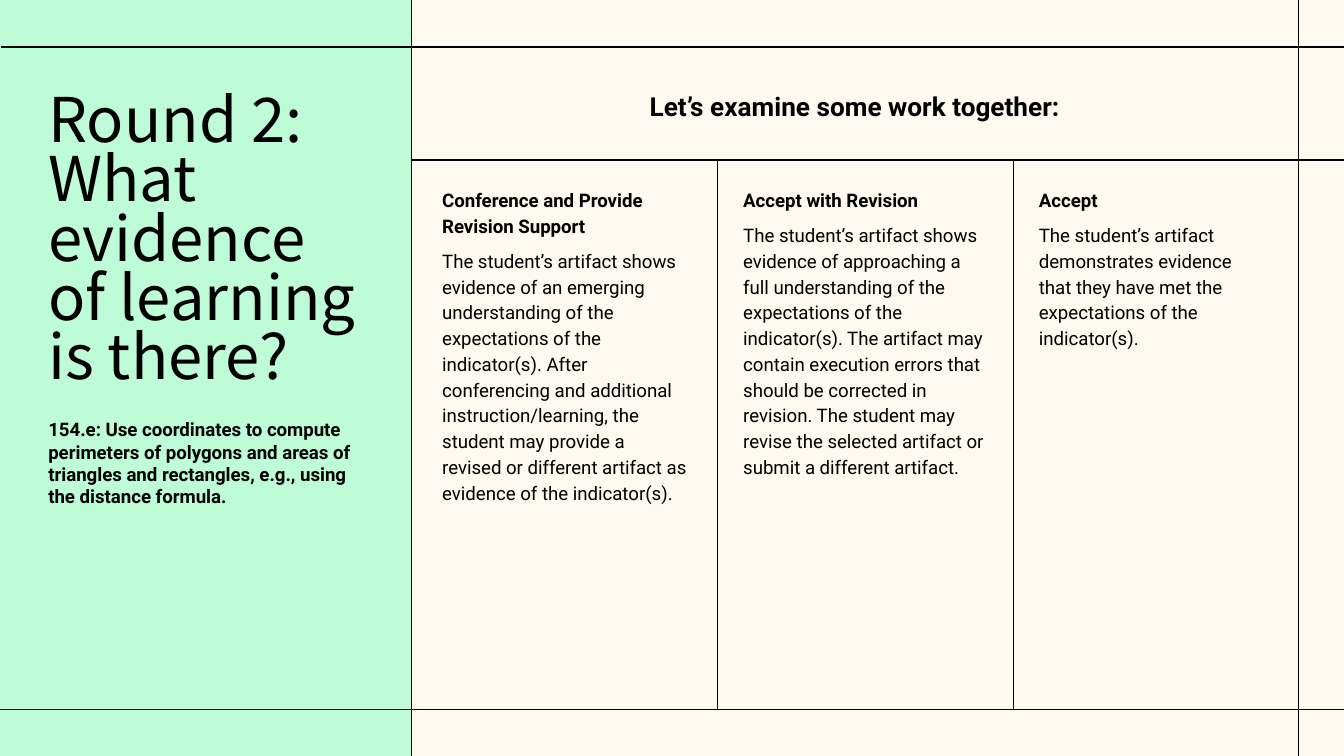
import pptx
import pptx.dml.color
import pptx.enum.shapes
import pptx.enum.text
import pptx.oxml.ns
import pptx.util
from dataclasses import dataclass
from lxml import etree

Inches = pptx.util.Inches
Pt = pptx.util.Pt
RGB = pptx.dml.color.RGBColor.from_string
ALIGN = pptx.enum.text.PP_ALIGN


@dataclass(frozen=True)
class Theme:
    background: str = "FFF8EF"
    panel: str = "BDFCD7"
    ink: str = "000000"
    title_font: str = "Noto Sans CJK KR"
    body_font: str = "Roboto"
    title_size: float = 33
    heading_size: float = 14
    body_size: float = 10
    rule_width: float = 0.75


THEME = Theme()
WIDTH = 10
HEIGHT = WIDTH * 9 / 16
PANEL_RIGHT = 3.06
TOP_RULE, HEADER_RULE, BOTTOM_RULE = 0.35, 1.19, 5.28
RIGHT_RULE = 9.66
RULE_START, RULE_END = 0.01, 10.02
COLUMN_TOP, COLUMN_WIDTH = 1.38, 1.82

TITLE = {"name": THEME.title_font, "size": Pt(THEME.title_size), "bold": False}
HEADING = {"name": THEME.body_font, "size": Pt(THEME.heading_size), "bold": True}
STRONG = {"name": THEME.body_font, "size": Pt(THEME.body_size), "bold": True}
BODY = {**STRONG, "bold": False}

COLUMN_LINES = {"line_spacing": 1.15}
COLUMN_BODY = {**COLUMN_LINES, "space_before": Pt(5), "space_after": Pt(5)}

# left edge, height, heading, description
COLUMNS = [
    (3.29, 2.56, "Conference and Provide Revision Support",
     "The student’s artifact shows evidence of an emerging understanding of the "
     "expectations of the indicator(s). After conferencing and additional "
     "instruction/learning, the student may provide a revised or different "
     "artifact as evidence of the indicator(s)."),
    (5.53, 2.37, "Accept with Revision",
     "The student’s artifact shows evidence of approaching a full understanding "
     "of the expectations of the indicator(s). The artifact may contain execution "
     "errors that should be corrected in revision. The student may revise the "
     "selected artifact or submit a different artifact."),
    (7.73, 1.21, "Accept",
     "The student’s artifact demonstrates evidence \n"
     "that they have met the expectations of the indicator(s)."),
]


def set_all(obj, values):
    for name, value in values.items():
        setattr(obj, name, value)


def add_rule(s, x1, y1, x2, y2):
    line = s.shapes.add_connector(
        pptx.enum.shapes.MSO_CONNECTOR.STRAIGHT,
        Inches(x1), Inches(y1), Inches(x2), Inches(y2))
    line.line.color.rgb = RGB(THEME.ink)
    line.line.width = Pt(THEME.rule_width)
    etree.SubElement(line._element.spPr, pptx.oxml.ns.qn("a:effectLst"))


def add_full_height_rule(s, x):
    add_rule(s, x, -0.01, x, 5.63)


def add_panel(s, x, y, w, h):
    sp = s.shapes.add_shape(
        pptx.enum.shapes.MSO_SHAPE.RECTANGLE,
        Inches(x), Inches(y), Inches(w), Inches(h))
    sp.shadow.inherit = False
    sp.fill.solid()
    sp.fill.fore_color.rgb = RGB(THEME.panel)
    sp.line.fill.background()


def add_text(s, x, y, w, h, paragraphs):
    """Each paragraph is (text, font values, paragraph values)."""
    sp = s.shapes.add_textbox(Inches(x), Inches(y), Inches(w), Inches(h))
    tf = sp.text_frame
    set_all(tf, {
        "word_wrap": True,
        "auto_size": pptx.enum.text.MSO_AUTO_SIZE.SHAPE_TO_FIT_TEXT,
        "margin_left": 0, "margin_right": 0, "margin_top": 0, "margin_bottom": 0,
    })
    for i, (text, font, layout) in enumerate(paragraphs):
        p = tf.add_paragraph() if i else tf.paragraphs[0]
        p.text = text
        set_all(p, layout)
        for r in p.runs:
            set_all(r.font, font)
            r.font.color.rgb = RGB(THEME.ink)


def main():
    prs = pptx.Presentation()
    prs.slide_width, prs.slide_height = Inches(WIDTH), Inches(HEIGHT)
    s = prs.slides.add_slide(prs.slide_layouts[6])
    s.background.fill.solid()
    s.background.fill.fore_color.rgb = RGB(THEME.background)

    # The panel covers the left part of the header rule.
    add_rule(s, RULE_START, HEADER_RULE, RULE_END, HEADER_RULE)
    add_text(s, 3.41, 0.67, 5.9, 0.24, [
        ("Let’s examine some work together:", HEADING, {"alignment": ALIGN.CENTER})])
    add_full_height_rule(s, RIGHT_RULE)
    add_panel(s, 0, 0, PANEL_RIGHT, HEIGHT)
    add_rule(s, -0.02, BOTTOM_RULE, RULE_END, BOTTOM_RULE)
    add_full_height_rule(s, PANEL_RIGHT)
    add_rule(s, RULE_START, TOP_RULE, RULE_END, TOP_RULE)

    add_text(s, 0.36, 0.71, 2.37, 2.22, [
        (text, TITLE, {"line_spacing": 0.8})
        for text in ("Round 2:", "What evidence of learning is there?")])
    add_text(s, 0.36, 3.11, 2.37, 0.67, [
        ("154.e: Use coordinates to compute perimeters of polygons and areas of "
         "triangles and rectangles, e.g., using the distance formula.", STRONG, {})])

    for x in (5.34, 7.54):
        add_rule(s, x, HEADER_RULE, x, BOTTOM_RULE)
    for x, h, heading, description in COLUMNS:
        add_text(s, x, COLUMN_TOP, COLUMN_WIDTH, h, [
            (heading, STRONG, COLUMN_LINES), (description, BODY, COLUMN_BODY)])

    prs.save("out.pptx")


if __name__ == "__main__":
    main()
